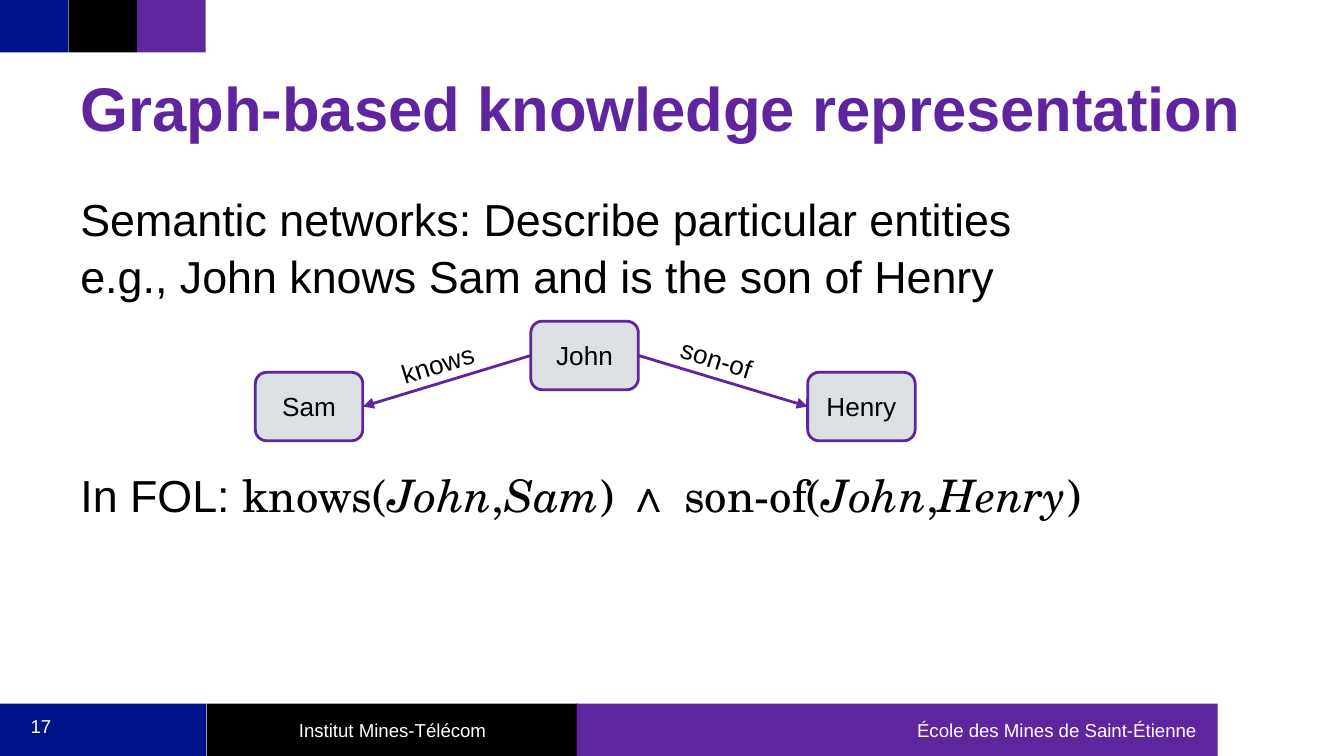
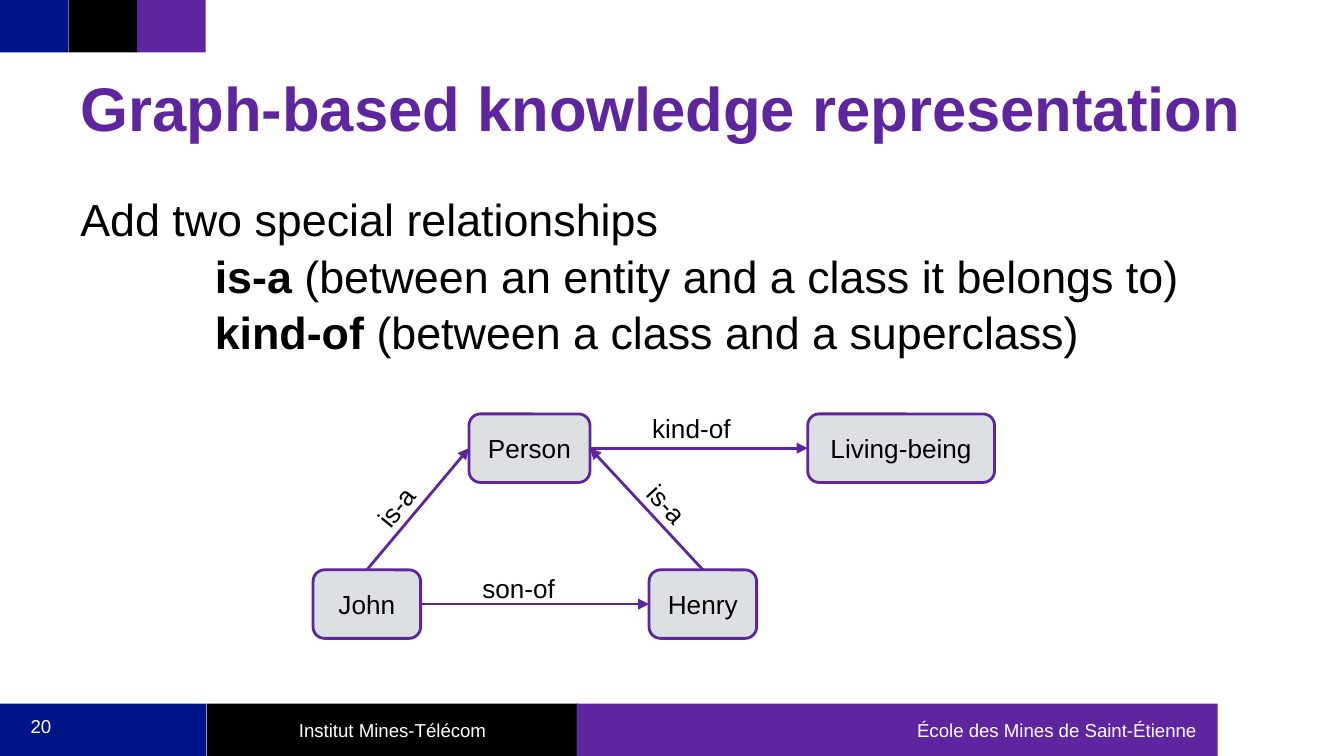
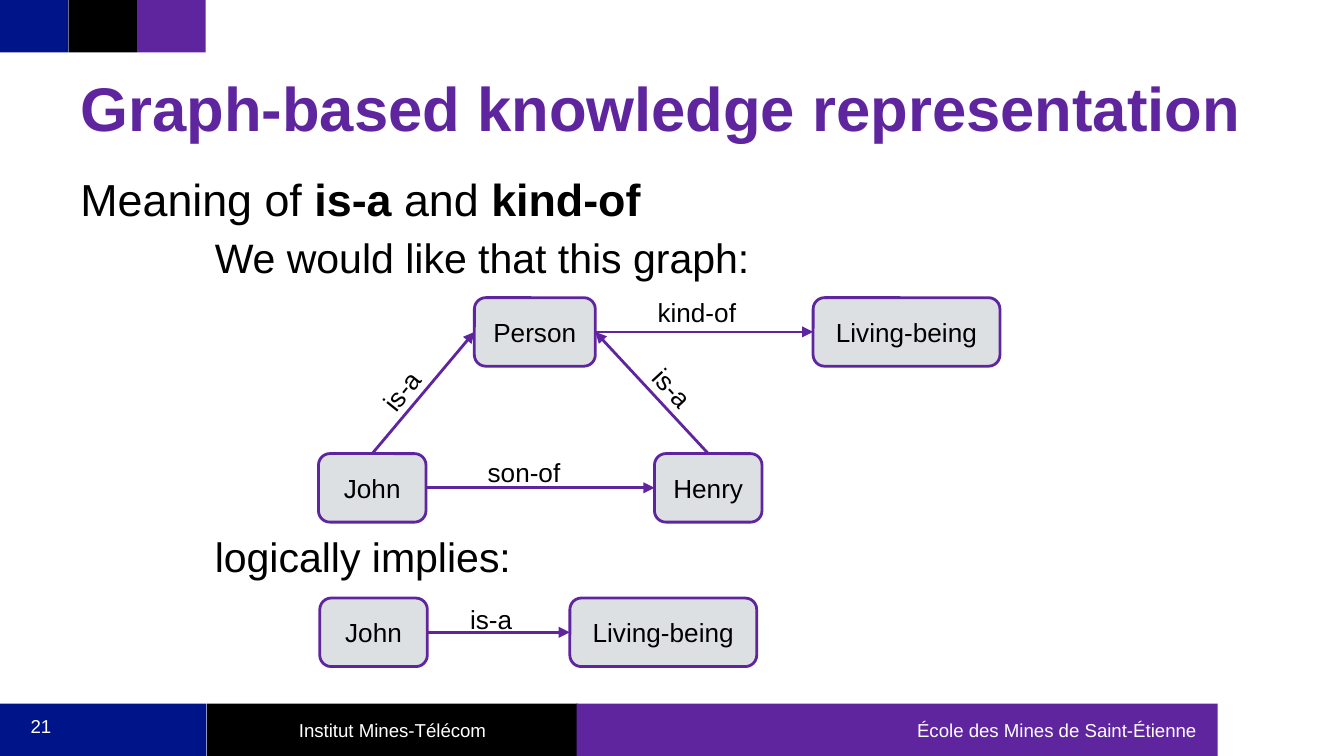
from dataclasses import dataclass
from typing import Optional

from lxml.etree import SubElement
from pptx import Presentation
from pptx.dml.color import RGBColor
from pptx.enum.shapes import MSO_CONNECTOR, MSO_SHAPE
from pptx.enum.text import MSO_ANCHOR, MSO_AUTO_SIZE, PP_ALIGN
from pptx.oxml.ns import qn
from pptx.util import Emu, Inches, Pt

COLUMNS, ROWS = 100, 56.25
CELL = Inches(10) / COLUMNS
BLUE, BLACK, PURPLE, GREY, WHITE = "001489", "000000", "5F259F", "DDE0E3", "FFFFFF"
SANS, SERIF = "Arial", "TeX Gyre Schola"
TITLE = "Graph-based knowledge representation"
BAND_HEIGHT = 3.9
NODE_HEIGHT = 5.1
LABEL_WIDTH = 8.7
LINE_SPACING = 1.05
TOP, LEFT, RIGHT = 0, 1, 3


@dataclass(frozen=True)
class Box:
    left: float
    top: float
    width: float
    height: float


@dataclass(frozen=True)
class Band:
    box: Box
    color: str
    text: str = ""
    align: PP_ALIGN = PP_ALIGN.CENTER
    right_margin: float = 1


@dataclass(frozen=True)
class Span:
    text: str
    bold: bool = False
    italic: bool = False
    font: str = SANS


@dataclass(frozen=True)
class Line:
    spans: list[Span]
    size: float = 24
    indent: float = 0
    space_before: float = 0


@dataclass(frozen=True)
class Node:
    key: str
    left: float
    top: float
    width: float = 8
    text: str = ""


@dataclass(frozen=True)
class Relation:
    source: str
    source_side: int
    target: str
    target_side: int
    text: str
    left: float
    top: float
    angle: float = 0
    align: PP_ALIGN = PP_ALIGN.CENTER


@dataclass(frozen=True)
class Network:
    nodes: list[Node]
    relations: list[Relation]
    right: float = 0
    down: float = 0


@dataclass(frozen=True)
class Page:
    number: int
    body_top: float
    lines: list[Line]
    networks: list[Network]


def cells(count: float) -> Emu:
    return Emu(round(count * CELL))


def place(box: Box) -> tuple[Emu, Emu, Emu, Emu]:
    return cells(box.left), cells(box.top), cells(box.width), cells(box.height)


def rgb(color: str) -> RGBColor:
    return RGBColor.from_string(color)


def style_run(run, size: float, color: str, bold: bool = False,
              italic: bool = False, font: str = SANS) -> None:
    run.font.name = font
    run.font.size = Pt(size)
    run.font.bold = bold
    run.font.italic = italic
    run.font.color.rgb = rgb(color)


def set_frame(frame, anchor: MSO_ANCHOR, right: float = 1) -> None:
    frame.word_wrap = True
    frame.auto_size = MSO_AUTO_SIZE.NONE
    frame.vertical_anchor = anchor
    frame.margin_left = frame.margin_top = frame.margin_bottom = cells(1)
    frame.margin_right = cells(right)


def write(frame, text: str, size: float, color: str, align: PP_ALIGN,
          anchor: MSO_ANCHOR = MSO_ANCHOR.MIDDLE, bold: bool = False, right: float = 1) -> None:
    set_frame(frame, anchor, right)
    frame.text = text
    paragraph = frame.paragraphs[0]
    paragraph.alignment = align
    for run in paragraph.runs:
        style_run(run, size, color, bold)


def add_block(slide, preset: MSO_SHAPE, box: Box, fill: str, outline: Optional[str] = None):
    block = slide.shapes.add_shape(preset, *place(box))
    block.shadow.inherit = False
    block.fill.solid()
    block.fill.fore_color.rgb = rgb(fill)
    if outline:
        block.line.color.rgb = rgb(outline)
        block.line.width = Pt(1.5)
    else:
        block.line.fill.background()
    return block


def brand_layout(layout, slide) -> None:
    footer_top = ROWS - BAND_HEIGHT
    square = 5.1
    bands = [Band(Box(i * square, 0, square, BAND_HEIGHT), color)
             for i, color in enumerate((BLUE, BLACK, PURPLE))]
    bands += [
        Band(Box(15.4, footer_top, 27.6, BAND_HEIGHT), BLACK, "Institut Mines-Télécom"),
        Band(Box(0, footer_top, 15.35, BAND_HEIGHT), BLUE),
        Band(Box(42.9, footer_top, 47.7, BAND_HEIGHT), PURPLE,
             "École des Mines de Saint-Étienne", PP_ALIGN.RIGHT, 1.6),
    ]
    for band in bands:
        block = add_block(slide, MSO_SHAPE.RECTANGLE, band.box, band.color)
        if band.text:
            write(block.text_frame, band.text, 10, WHITE, band.align, right=band.right_margin)
        layout.shapes._spTree.append(block._element)


def add_title(slide) -> None:
    title = slide.shapes.title
    title.left, title.top, title.width, title.height = place(Box(5, 2.3, 90, 9.4))
    write(title.text_frame, TITLE, 33, PURPLE, PP_ALIGN.LEFT, MSO_ANCHOR.BOTTOM, bold=True)


def add_body(slide, top: float, lines: list[Line]) -> None:
    frame = slide.shapes.add_textbox(*place(Box(5, top, 90, 40.7))).text_frame
    set_frame(frame, MSO_ANCHOR.TOP)
    for i, line in enumerate(lines):
        paragraph = frame.add_paragraph() if i else frame.paragraphs[0]
        paragraph.line_spacing = LINE_SPACING
        if line.space_before:
            paragraph.space_before = Pt(line.space_before)
        if line.indent:
            paragraph._p.get_or_add_pPr().set("marL", str(cells(line.indent)))
        for span in line.spans:
            run = paragraph.add_run()
            run.text = span.text
            style_run(run, line.size, BLACK, span.bold, span.italic, span.font)


def add_arrow(slide, source, source_side: int, target, target_side: int) -> None:
    arrow = slide.shapes.add_connector(MSO_CONNECTOR.STRAIGHT, 0, 0, 0, 0)
    arrow.begin_connect(source, source_side)
    arrow.end_connect(target, target_side)
    arrow.line.color.rgb = rgb(PURPLE)
    arrow.line.width = Pt(1.5)
    SubElement(arrow.line._get_or_add_ln(), qn("a:tailEnd"), type="triangle")
    SubElement(arrow._element.spPr, qn("a:effectLst"))


def add_network(slide, network: Network) -> None:
    drawn = {}
    for node in network.nodes:
        box = Box(node.left + network.right, node.top + network.down, node.width, NODE_HEIGHT)
        drawn[node.key] = add_block(slide, MSO_SHAPE.ROUNDED_RECTANGLE, box, GREY, PURPLE)
        write(drawn[node.key].text_frame, node.key, 14, BLACK, PP_ALIGN.CENTER)
    for relation in network.relations:
        add_arrow(slide, drawn[relation.source], relation.source_side,
                  drawn[relation.target], relation.target_side)
        box = Box(relation.left + network.right, relation.top + network.down,
                  LABEL_WIDTH, NODE_HEIGHT)
        label = slide.shapes.add_textbox(*place(box))
        label.rotation = relation.angle
        write(label.text_frame, relation.text, 14, BLACK, relation.align, MSO_ANCHOR.TOP)


def add_page_number(slide, number: int) -> None:
    corner = slide.shapes.add_textbox(*place(Box(0.1, 51.9, 5.9, 4.3)))
    write(corner.text_frame, str(number), 10, WHITE, PP_ALIGN.CENTER)


def taxonomy(right: float = 0, down: float = 0) -> Network:
    return Network(
        [Node("John", 23.3, 42.4), Node("Henry", 48.3, 42.4),
         Node("Person", 34.9, 30.8, 9), Node("Living-being", 60.1, 30.8, 13.9)],
        [Relation("John", RIGHT, "Henry", LEFT, "son-of", 34.9, 41.6, align=PP_ALIGN.LEFT),
         Relation("John", TOP, "Person", LEFT, "is-a", 25.4, 35.4, 308.8),
         Relation("Henry", TOP, "Person", RIGHT, "is-a", 45, 35.2, 47.2),
         Relation("Person", RIGHT, "Living-being", LEFT, "kind-of", 47.1, 29.7)],
        right, down)


def formula() -> list[Span]:
    terms = ("knows(", "John", ",", "Sam", ") ∧ son-of(", "John", ",", "Henry", ")")
    return [Span(term, italic=i % 2 == 1, font=SERIF) for i, term in enumerate(terms)]


def pages() -> list[Page]:
    acquaintances = Network(
        [Node("John", 39.5, 23.9), Node("Sam", 19, 27.7), Node("Henry", 60.1, 27.7)],
        [Relation("John", RIGHT, "Henry", LEFT, "son-of", 49.5, 24.7, 17.3, PP_ALIGN.LEFT),
         Relation("John", LEFT, "Sam", RIGHT, "knows", 28.9, 24.7, 342.8, PP_ALIGN.LEFT)])
    conclusion = Network(
        [Node("John", 23.8, 44.5), Node("Living-being", 42.4, 44.5, 13.9)],
        [Relation("John", RIGHT, "Living-being", LEFT, "is-a", 32.2, 43.9)])
    return [
        Page(17, 13.1, [
            Line([Span("Semantic networks: Describe particular entities")]),
            Line([Span("e.g., John knows Sam and is the son of Henry")]),
            Line([Span("In FOL: "), *formula()], space_before=87),
        ], [acquaintances]),
        Page(20, 13.1, [
            Line([Span("Add two special relationships")]),
            Line([Span("is-a", bold=True),
                  Span(" (between an entity and a class it belongs to)")], indent=10),
            Line([Span("kind-of", bold=True),
                  Span(" (between a class and a superclass)")], indent=10),
        ], [taxonomy()]),
        Page(21, 11.6, [
            Line([Span("Meaning of "), Span("is-a", bold=True),
                  Span(" and "), Span("kind-of", bold=True)]),
            Line([Span("We would like that this graph:")], 22, 10, 2.4),
            Line([Span("logically implies:")], 22, 10, 132.5),
        ], [taxonomy(0.4, -8.65), conclusion]),
    ]


def main() -> None:
    deck = Presentation()
    deck.slide_width, deck.slide_height = cells(COLUMNS), cells(ROWS)
    layout = deck.slide_layouts[5]
    for i, page in enumerate(pages()):
        slide = deck.slides.add_slide(layout)
        if i == 0:
            brand_layout(layout, slide)
        add_title(slide)
        add_body(slide, page.body_top, page.lines)
        for network in page.networks:
            add_network(slide, network)
        add_page_number(slide, page.number)
    deck.save("out.pptx")


if __name__ == "__main__":
    main()
